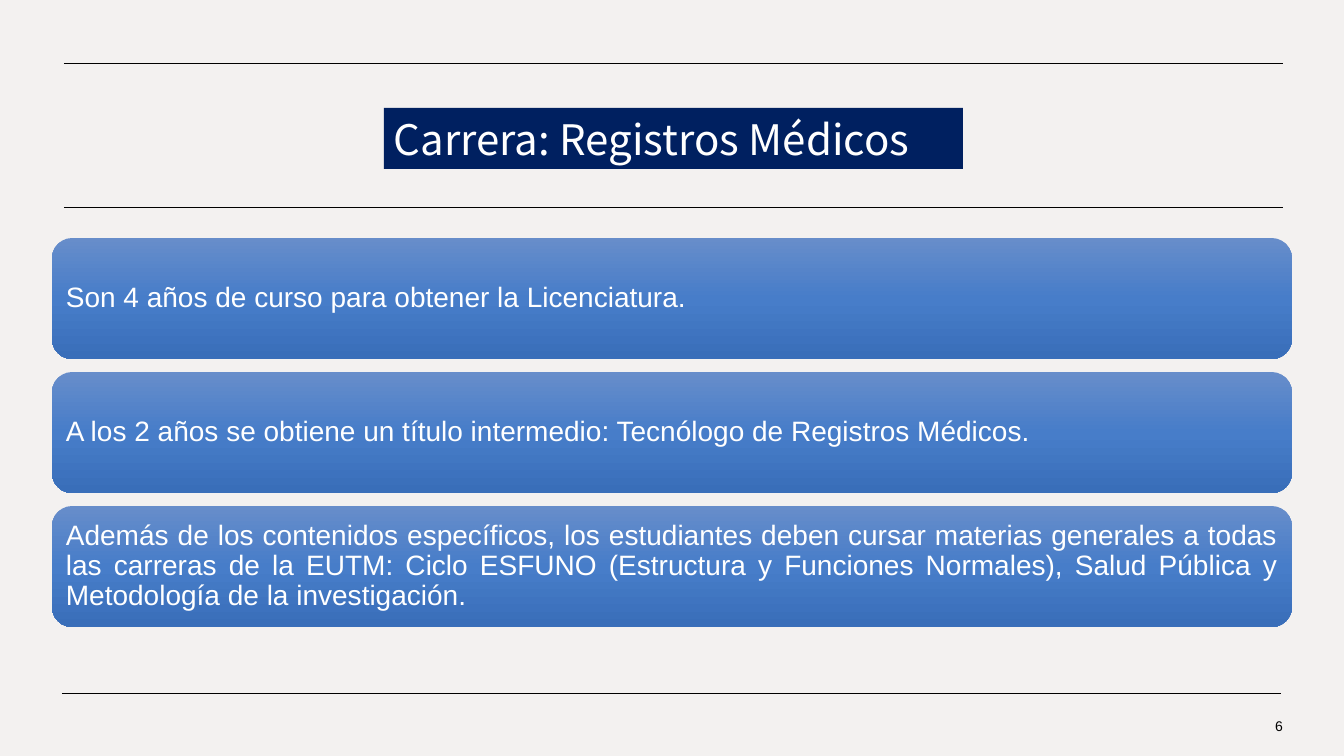
import copy

import pptx
import pptx.dml.color
import pptx.enum.shapes
import pptx.enum.text
import pptx.oxml
import pptx.oxml.ns
import pptx.util

ALIGN = pptx.enum.text.PP_ALIGN
SHAPE = pptx.enum.shapes.MSO_SHAPE
PX = 914400 / 100.8


def px(n):
    return pptx.util.Emu(round(n * PX))


def rgb(value):
    return pptx.dml.color.RGBColor.from_string(value)


class SlideBuilder:
    """Holds the style and the current slide, and draws its elements."""

    ink, paper, white, navy = "000000", "F3F1F0", "FFFFFF", "002060"
    body_font, title_font = "Arial", "Noto Sans CJK KR"
    gradient = ((0, "678DCA"), (0.5, "477DC9"), (1, "396EB9"))

    def __init__(self, prs):
        self.s = prs.slides.add_slide(prs.slide_layouts[6])
        fill = self.s.background.fill
        fill.solid()
        fill.fore_color.rgb = rgb(self.paper)

    def rule(self, x, y, width):
        line = self.s.shapes.add_connector(
            pptx.enum.shapes.MSO_CONNECTOR.STRAIGHT,
            px(x), px(y), px(x + width), px(y))
        line.line.color.rgb = rgb(self.ink)
        line.line.width = pptx.util.Pt(0.5)
        pr = line._element.spPr
        pr.append(pptx.oxml.parse_xml(
            "<a:effectLst %s/>" % pptx.oxml.ns.nsdecls("a")))

    def shape(self, kind, box):
        sp = self.s.shapes.add_shape(kind, *map(px, box))
        sp.shadow.inherit = False
        sp.line.fill.background()
        return sp

    def label(self, sp, text, size, font, color, margins, align=ALIGN.LEFT,
              spacing=1.0):
        tf = sp.text_frame
        side, top = map(px, margins)
        frame = {"word_wrap": True, "margin_left": side, "margin_right": side,
                 "margin_top": top, "margin_bottom": top,
                 "vertical_anchor": pptx.enum.text.MSO_ANCHOR.MIDDLE}
        for name, value in frame.items():
            setattr(tf, name, value)
        p = tf.paragraphs[0]
        p.alignment, p.line_spacing = align, spacing
        r = p.add_run()
        r.text = text
        for name, value in {"size": pptx.util.Pt(size), "name": font}.items():
            setattr(r.font, name, value)
        r.font.color.rgb = rgb(color)

    def title(self, text, box):
        sp = self.shape(SHAPE.RECTANGLE, box)
        sp.fill.solid()
        sp.fill.fore_color.rgb = rgb(self.navy)
        self.label(sp, text, 30, self.title_font, self.white, (10, 0))

    def card(self, text, box, align):
        sp = self.shape(SHAPE.ROUNDED_RECTANGLE, box)
        sp.fill.gradient()
        sp.fill.gradient_angle = 270
        stops = sp._element.spPr.find(".//" + pptx.oxml.ns.qn("a:gsLst"))
        stops.append(copy.deepcopy(stops[0]))
        for stop, (position, color) in zip(sp.fill.gradient_stops, self.gradient):
            stop.position = position
            stop.color.rgb = rgb(color)
        self.label(sp, text, 20, self.body_font, self.white, (8, 8), align, 0.9)

    def page_number(self, text, box):
        sp = self.s.shapes.add_textbox(*map(px, box))
        self.label(sp, text, 10, self.body_font, self.ink, (10, 5), ALIGN.RIGHT)


def main():
    prs = pptx.Presentation()
    prs.slide_width, prs.slide_height = px(1344), px(756)
    slide = SlideBuilder(prs)
    for x, y in ((64, 63), (64, 207), (62, 693)):
        slide.rule(x, y, 1219)
    slide.title("Carrera: Registros Médicos", (384, 108, 579, 61))
    cards = (
        ("Son 4 años de curso para obtener la Licenciatura.", ALIGN.LEFT),
        ("A los 2 años se obtiene un título intermedio: "
         "Tecnólogo de Registros Médicos.", ALIGN.LEFT),
        ("Además de los contenidos específicos, los estudiantes deben cursar "
         "materias generales a todas las carreras de la EUTM: Ciclo ESFUNO "
         "(Estructura y Funciones Normales), Salud Pública y Metodología de "
         "la investigación.", ALIGN.JUSTIFY),
    )
    for i, (text, align) in enumerate(cards):
        slide.card(text, (52, 238 + 134 * i, 1240, 121), align)
    slide.page_number("6", (1216, 706, 77, 40))
    prs.save("out.pptx")


if __name__ == "__main__":
    main()
